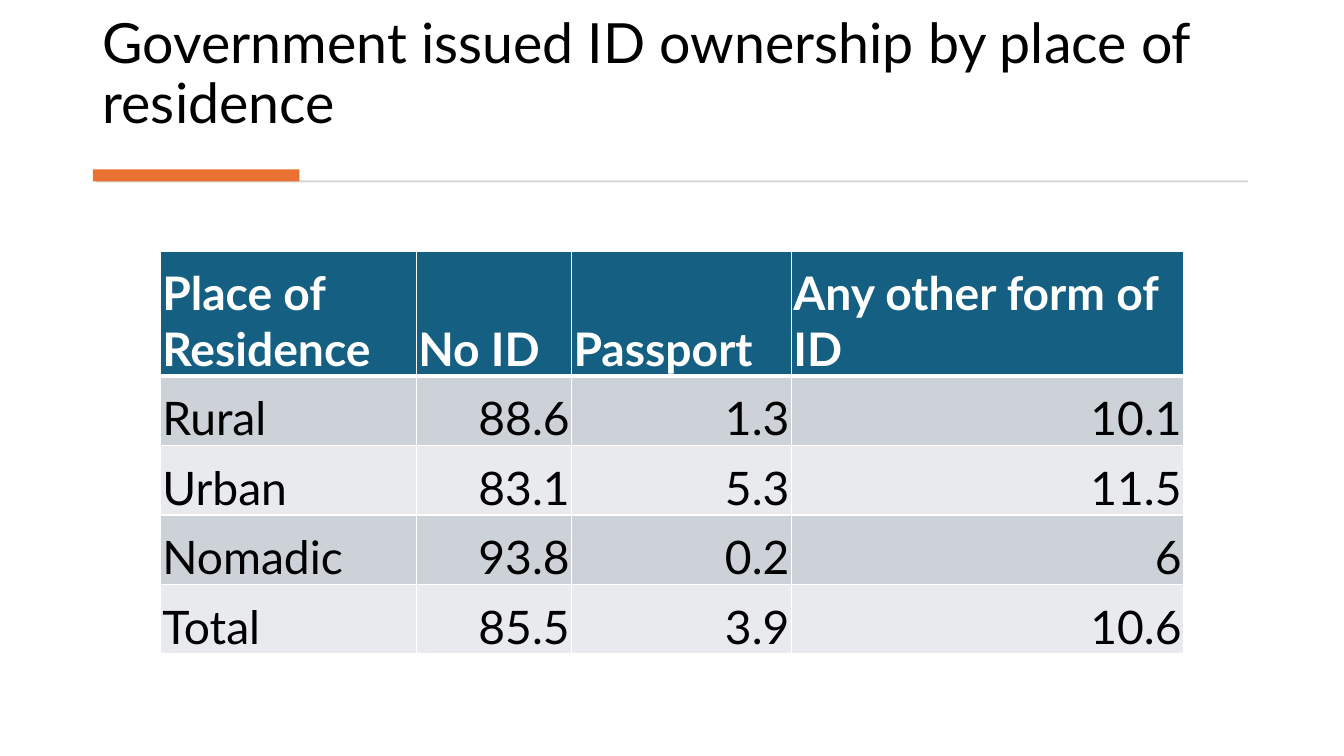
from lxml.etree import SubElement
from pptx import Presentation
from pptx.dml.color import RGBColor
from pptx.enum.shapes import MSO_SHAPE as Shape
from pptx.enum.text import MSO_ANCHOR as Anchor, PP_ALIGN as Align
from pptx.oxml.ns import qn
from pptx.util import Inches, Pt

HEADS = ["Place of Residence", "No ID", "Passport", "Any other form of ID"]
ROWS = [
    ["Rural", "88.6", "1.3", "10.1"],
    ["Urban", "83.1", "5.3", "11.5"],
    ["Nomadic", "93.8", "0.2", "6"],
    ["Total", "85.5", "3.9", "10.6"],
]
WIDTHS = [2.54, 1.54, 2.18, 3.89]
HEIGHTS = [1.24] + [0.69] * len(ROWS)


def color(code):
    return RGBColor.from_string(code)


class Page:
    font = "Lato"
    ink, paper = "000000", "FFFFFF"
    head, bands = "156082", ("CCD2D8", "E8EAED")
    rule, accent = "D5D5D5", "E97132"

    def __init__(self, slide):
        self.slide = slide

    def style(self, para, size, ink, bold=False):
        for run in para.runs:
            run.font.name = self.font
            run.font.size = Pt(size)
            run.font.bold = bold
            run.font.color.rgb = color(ink)

    def title(self, text, *box):
        frame = self.slide.shapes.add_textbox(*map(Inches, box)).text_frame
        frame.word_wrap = True
        frame.vertical_anchor = Anchor.BOTTOM
        frame.text = text
        para = frame.paragraphs[0]
        para.line_spacing = 0.9
        self.style(para, 39.6, self.ink)

    def bar(self, fill, *box):
        bar = self.slide.shapes.add_shape(Shape.RECTANGLE, *map(Inches, box))
        bar.shadow.inherit = False
        bar.fill.solid()
        bar.fill.fore_color.rgb = color(fill)
        bar.line.fill.background()

    def border(self, cell, top, bottom):
        props = cell._tc.get_or_add_tcPr()
        for side, width in (("L", 1), ("R", 1), ("T", top), ("B", bottom)):
            line = SubElement(props, qn("a:ln" + side), w=str(Pt(width)))
            fill = SubElement(line, qn("a:solidFill"))
            SubElement(fill, qn("a:srgbClr"), val=self.paper)

    def cell(self, cell, text, row, col):
        first = row == 0
        cell.margin_left = cell.margin_right = cell.margin_top = Inches(0.02)
        cell.margin_bottom = 0
        cell.vertical_anchor = Anchor.BOTTOM
        # Borders come before the fill in the cell's XML
        self.border(cell, 3 if row == 1 else 1, 3 if first else 1)
        cell.fill.solid()
        fill = self.head if first else self.bands[(row - 1) % 2]
        cell.fill.fore_color.rgb = color(fill)
        cell.text_frame.text = text
        para = cell.text_frame.paragraphs[0]
        para.alignment = Align.LEFT if first or col == 0 else Align.RIGHT
        self.style(para, 33, self.paper if first else self.ink, first)

    def table(self, data, left, top, widths, heights):
        box = map(Inches, (left, top, sum(widths), sum(heights)))
        table = self.slide.shapes.add_table(len(data), len(widths), *box).table
        for col, width in zip(table.columns, widths):
            col.width = Inches(width)
        for row, height in zip(table.rows, heights):
            row.height = Inches(height)
        for r, line in enumerate(data):
            for c, text in enumerate(line):
                self.cell(table.cell(r, c), text, r, c)


def main():
    deck = Presentation()
    deck.slide_width, deck.slide_height = Inches(13.33), Inches(7.5)
    page = Page(deck.slides.add_slide(deck.slide_layouts[6]))

    # Title
    page.title("Government issued ID ownership by place of residence",
               0.92, 0.28, 11.49, 1.11)

    # Rule with accent
    page.bar(page.rule, 0.95, 1.79, 11.43, 0.02)
    page.bar(page.accent, 0.92, 1.68, 2.05, 0.12)

    # Ownership table
    page.table([HEADS] + ROWS, 1.59, 2.49, WIDTHS, HEIGHTS)

    deck.save("out.pptx")


if __name__ == "__main__":
    main()
